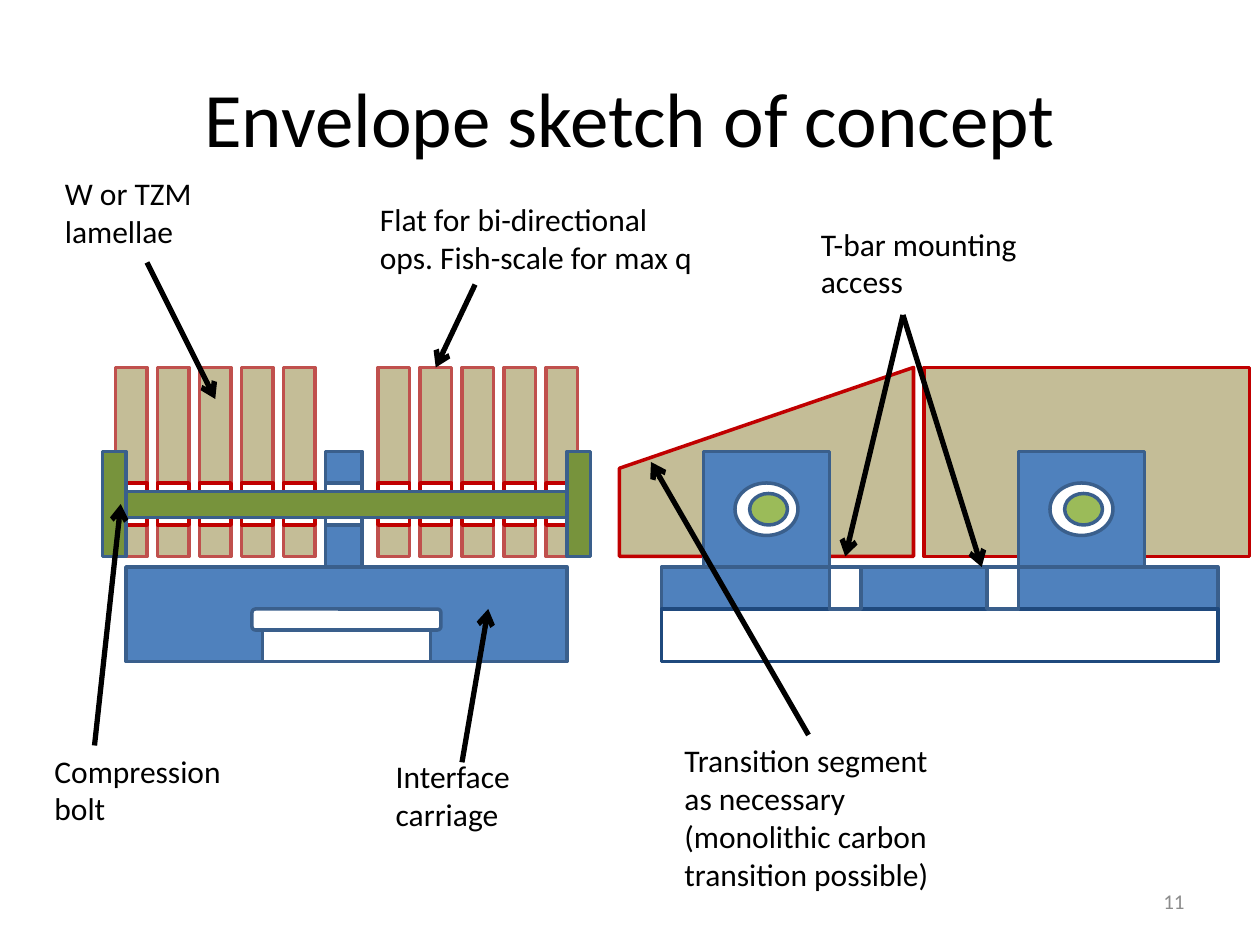
from lxml.etree import SubElement
from pptx import Presentation
from pptx.dml.color import RGBColor
from pptx.enum.shapes import MSO_CONNECTOR, MSO_SHAPE
from pptx.enum.text import MSO_ANCHOR, MSO_AUTO_SIZE, PP_ALIGN
from pptx.oxml.ns import qn
from pptx.util import Inches, Pt

# Grid: 120 columns by 90 rows, twelve to the inch
UNIT = Inches(1) / 12
BLACK, GREY, WHITE = "000000", "8C8C8C", "FFFFFF"
BLUE, OUTLINE, NAVY = "4F81BD", "3A5F8C", "1F497D"
TAN, ROSE, RED = "C4BD97", "C0504D", "C00000"
BOLT, PIN = "77933C", "9BBB59"
RECT, ROUND, OVAL = MSO_SHAPE.RECTANGLE, MSO_SHAPE.ROUNDED_RECTANGLE, MSO_SHAPE.OVAL

TITLE = "Envelope sketch of concept"
PAGE = "11"

# Parts: (shape, (column, row, columns, rows), fill, line), back to front
FRONT_CARRIAGE = [
    (RECT, (12, 54, 42, 9), BLUE, OUTLINE),
    (RECT, (25, 60, 16, 3), WHITE, OUTLINE),
    (ROUND, (24, 58, 18, 2), WHITE, OUTLINE),
    (RECT, (31, 43, 3.5, 11), BLUE, OUTLINE),
    (RECT, (31, 46, 3.5, 4), WHITE, OUTLINE),
]
COMPRESSION_BOLT = [
    (RECT, (11.4, 46.8, 43.7, 2.5), BOLT, OUTLINE),
    (RECT, (54, 43, 2.25, 10), BOLT, OUTLINE),
    (RECT, (9.75, 43, 2.25, 10), BOLT, OUTLINE),
]
SIDE_CARRIAGE = [
    (RECT, (63, 54, 53, 9), BLUE, OUTLINE),
    (RECT, (63, 58, 53, 5), WHITE, NAVY),
]
FULL_SEGMENT = (RECT, (88, 35, 31, 18), TAN, RED)
TRANSITION_SEGMENT = [(59, 44.6), (87, 35), (87, 53), (59, 53)]

LAMELLA_STACKS, LAMELLAE, PITCH = (11, 36), 5, 4
LUGS = (67, 97)          # left column of each lug
ACCESS_SLOTS = (79, 94)  # left column of each slot

# Labels: (text, (column, row, columns, rows))
LABELS = [
    ("W or TZM lamellae", (5, 16, 15.5, 8.5)),
    ("Flat for bi-directional ops. Fish-scale for max q", (35, 18.5, 33, 8.5)),
    ("T-bar mounting access", (77, 20.8, 23, 8.5)),
    ("Compression bolt", (4, 71, 20, 8.5)),
    ("Interface carriage", (36.5, 71.5, 16.5, 8.5)),
    ("Transition segment as necessary (monolithic carbon transition possible)",
     (64, 70, 28.2, 15.7)),
]
# Arrows: (start, end)
ARROWS = [
    ((14, 25), (20.5, 38)),
    ((45.25, 27.1), (41.5, 35)),
    ((86, 30), (93.5, 54)),
    ((86, 30), (80.5, 53)),
    ((9, 71), (11.5, 48)),
    ((44, 72.6), (46.5, 58)),
    ((77, 70), (62, 44)),
]


def grid(values):
    return [round(value * UNIT) for value in values]


def colour(code):
    return RGBColor.from_string(code)


def paint(part, fill, line):
    part.shadow.inherit = False
    part.fill.solid()
    part.fill.fore_color.rgb = colour(fill)
    part.line.color.rgb = colour(line)
    part.line.width = Pt(2)


def add_part(shapes, kind, box, fill, line):
    paint(shapes.add_shape(kind, *grid(box)), fill, line)


def add_parts(shapes, parts):
    for part in parts:
        add_part(shapes, *part)


def write(frame, text, size, ink=BLACK, align=PP_ALIGN.LEFT):
    frame.word_wrap = True
    paragraph = frame.paragraphs[0]
    paragraph.alignment = align
    run = paragraph.add_run()
    run.text = text
    run.font.name = "Calibri"
    run.font.size = Pt(size)
    run.font.color.rgb = colour(ink)


def add_arrow(shapes, start, end):
    arrow = shapes.add_connector(MSO_CONNECTOR.STRAIGHT, *grid(start + end))
    arrow.line.color.rgb = colour(BLACK)
    arrow.line.width = Pt(3)
    SubElement(arrow.line._get_or_add_ln(), qn("a:tailEnd"), type="arrow")
    SubElement(arrow._element.spPr, qn("a:effectLst"))


def add_lamella(shapes, column):
    lamella = shapes.add_group_shape().shapes
    add_part(lamella, RECT, (column, 35, 3, 18), TAN, ROSE)
    add_part(lamella, RECT, (column, 46, 3, 4), WHITE, RED)


def add_front_view(shapes):
    add_parts(shapes, FRONT_CARRIAGE)
    for first in LAMELLA_STACKS:
        for index in reversed(range(LAMELLAE)):
            add_lamella(shapes, first + index * PITCH)
    add_parts(shapes, COMPRESSION_BOLT)


def add_side_view(shapes):
    add_part(shapes, *FULL_SEGMENT)
    add_parts(shapes, SIDE_CARRIAGE)
    start, *corners = [grid(point) for point in TRANSITION_SEGMENT]
    builder = shapes.build_freeform(*start)
    builder.add_line_segments(corners, close=True)
    paint(builder.convert_to_shape(), TAN, RED)
    for column in LUGS:
        add_parts(shapes, [
            (RECT, (column, 43, 12, 11), BLUE, OUTLINE),
            (OVAL, (column + 3, 46, 6, 5), WHITE, OUTLINE),
            (OVAL, (column + 4.4, 47, 3.6, 3), PIN, OUTLINE),
        ])
    for column in ACCESS_SLOTS:
        add_part(shapes, RECT, (column, 54, 3, 4), WHITE, OUTLINE)


def main():
    deck = Presentation()
    deck.slide_width, deck.slide_height = grid((120, 90))
    shapes = deck.slides.add_slide(deck.slide_layouts[5]).shapes

    # Title and page number
    title = shapes.title
    title.left, title.top, title.width, title.height = grid((6, 3.6, 108, 15))
    title.text_frame.vertical_anchor = MSO_ANCHOR.MIDDLE
    write(title.text_frame, TITLE, 44, align=PP_ALIGN.CENTER)
    page = shapes.add_textbox(*grid((86, 83.4, 28, 4.8))).text_frame
    page.vertical_anchor = MSO_ANCHOR.MIDDLE
    write(page, PAGE, 12, GREY, PP_ALIGN.RIGHT)

    # Two views of the assembly
    add_front_view(shapes)
    add_side_view(shapes)

    # Call-outs
    for text, box in LABELS:
        label = shapes.add_textbox(*grid(box)).text_frame
        write(label, text, 18)
        label.auto_size = MSO_AUTO_SIZE.SHAPE_TO_FIT_TEXT
    for start, end in ARROWS:
        add_arrow(shapes, start, end)

    deck.save("out.pptx")


if __name__ == "__main__":
    main()
